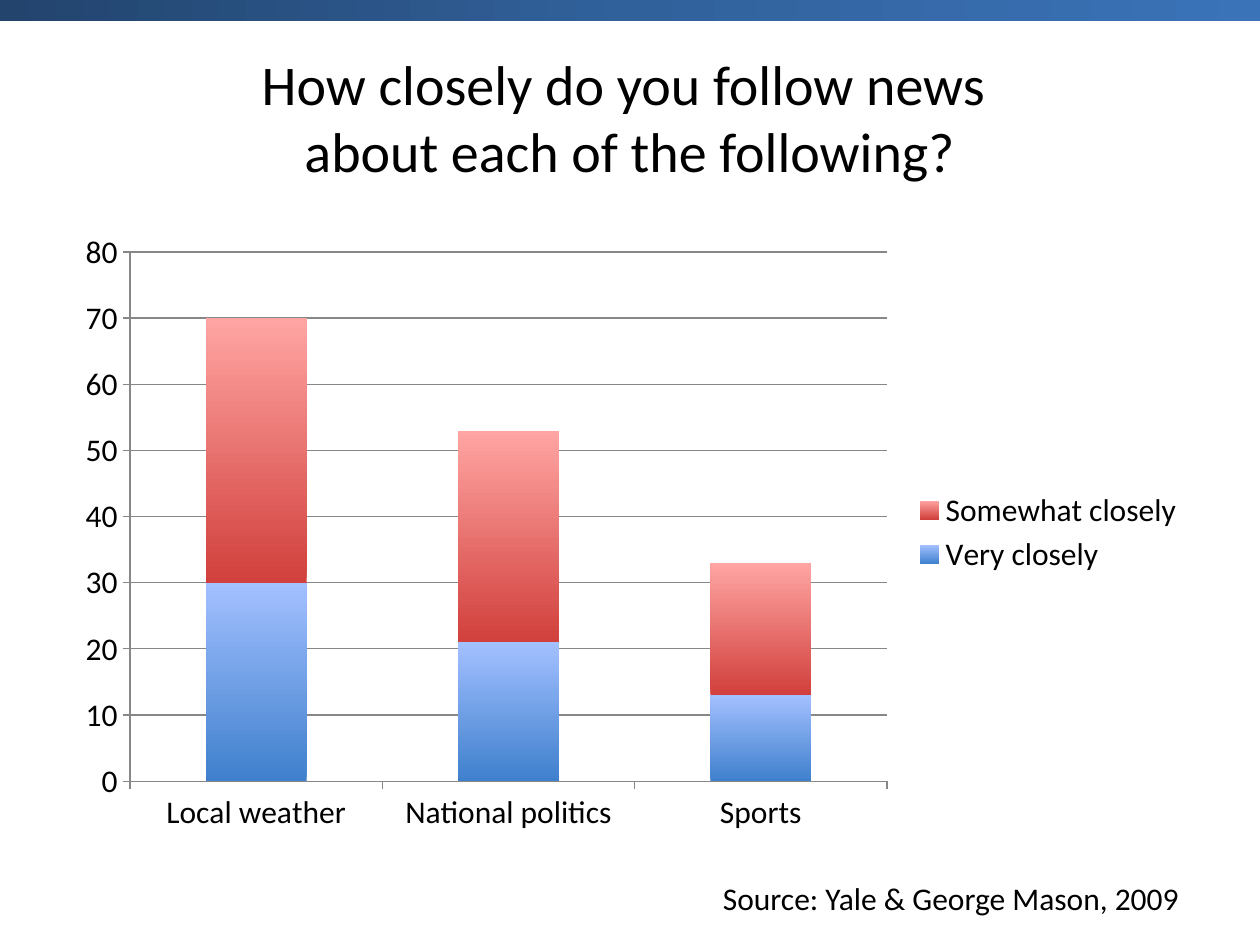
"""Build a slide with a stacked column chart on how closely people follow news."""
from copy import deepcopy

from pptx import Presentation
from pptx.chart.data import CategoryChartData as ChartData
from pptx.dml.color import RGBColor
from pptx.enum.chart import XL_CHART_TYPE as Chart, XL_LEGEND_POSITION as Legend, XL_TICK_MARK as Tick
from pptx.enum.shapes import MSO_SHAPE as Shape
from pptx.enum.text import MSO_ANCHOR as Anchor, PP_ALIGN as Align
from pptx.util import Pt

FONT = "Calibri"
BLACK = RGBColor(0x00, 0x00, 0x00)
GRAY = RGBColor(0x87, 0x87, 0x87)
BAND = [RGBColor(0x22, 0x44, 0x6D), RGBColor(0x31, 0x61, 0x9B), RGBColor(0x3A, 0x73, 0xB8)]
BLUES = [RGBColor(0x3F, 0x80, 0xCD), RGBColor(0xA3, 0xC0, 0xFF)]
REDS = [RGBColor(0xD1, 0x40, 0x3C), RGBColor(0xFF, 0xA5, 0xA3)]

TITLE = ["How closely do you follow news ", "about each of the following?"]
SOURCE = ["Source: Yale & George Mason, 2009"]
TOPICS = ["Local weather", "National politics", "Sports"]
SERIES = [("Very closely", [30, 21, 13], BLUES), ("Somewhat closely", [40, 32, 20], REDS)]


def style(font, size):
    font.name, font.size = FONT, Pt(size)
    font.color.rgb = BLACK


def add_text(slide, lines, box, size=18, align=Align.LEFT, anchor=Anchor.TOP, wrap=True):
    frame = slide.shapes.add_textbox(*map(Pt, box)).text_frame
    frame.word_wrap, frame.vertical_anchor = wrap, anchor
    para = frame.paragraphs[0]
    para.alignment = align
    for i, line in enumerate(lines):
        if i:
            para.add_line_break()
        run = para.add_run()
        run.text = line
        style(run.font, size)


def blend(fill, node, colors, angle):
    fill.gradient()
    fill.gradient_angle = angle
    stops = node.xpath(".//a:gsLst")[0]
    for _ in colors[2:]:
        stops.insert(1, deepcopy(stops[0]))
    for i, (stop, color) in enumerate(zip(fill.gradient_stops, colors)):
        stop.position = i / (len(colors) - 1)
        stop.color.rgb = color


def add_band(slide):
    band = slide.shapes.add_shape(Shape.RECTANGLE, Pt(0), Pt(-12), Pt(720), Pt(24))
    band.shadow.inherit = False
    band.line.fill.background()
    blend(band.fill, band.element, BAND, 0)


def add_chart(slide):
    data = ChartData()
    data.categories = TOPICS
    for name, vals, _ in SERIES:
        data.add_series(name, vals)
    box = map(Pt, (36, 126, 648, 356.4))
    chart = slide.shapes.add_chart(Chart.COLUMN_STACKED, *box, data).chart
    style(chart.font, 18)
    chart.has_title = False
    chart.has_legend = True
    chart.legend.position = Legend.RIGHT
    chart.legend.include_in_layout = False
    plot = chart.plots[0]
    plot.gap_width, plot.overlap = 150, 100
    plot.vary_by_categories = False
    for bars, (_, _, colors) in zip(plot.series, SERIES):
        blend(bars.format.fill, bars.format.fill and bars._element, colors, 90)
    axis = chart.value_axis
    axis.minimum_scale, axis.maximum_scale, axis.major_unit = 0, 80, 10
    axis.has_major_gridlines = True
    for part in (axis, chart.category_axis):
        part.major_tick_mark = Tick.OUTSIDE
    for part in (axis, chart.category_axis, axis.major_gridlines):
        part.format.line.color.rgb = GRAY
        part.format.line.width = Pt(0.75)


def main():
    deck = Presentation()
    deck.slide_width, deck.slide_height = Pt(720), Pt(540)
    slide = deck.slides.add_slide(deck.slide_layouts[6])
    add_text(slide, TITLE, (36, 21.6, 648, 90), size=32, align=Align.CENTER, anchor=Anchor.MIDDLE)
    add_chart(slide)
    add_text(slide, SOURCE, (406, 498.5, 278, 29), wrap=False)
    add_band(slide)
    deck.save("out.pptx")


if __name__ == "__main__":
    main()
